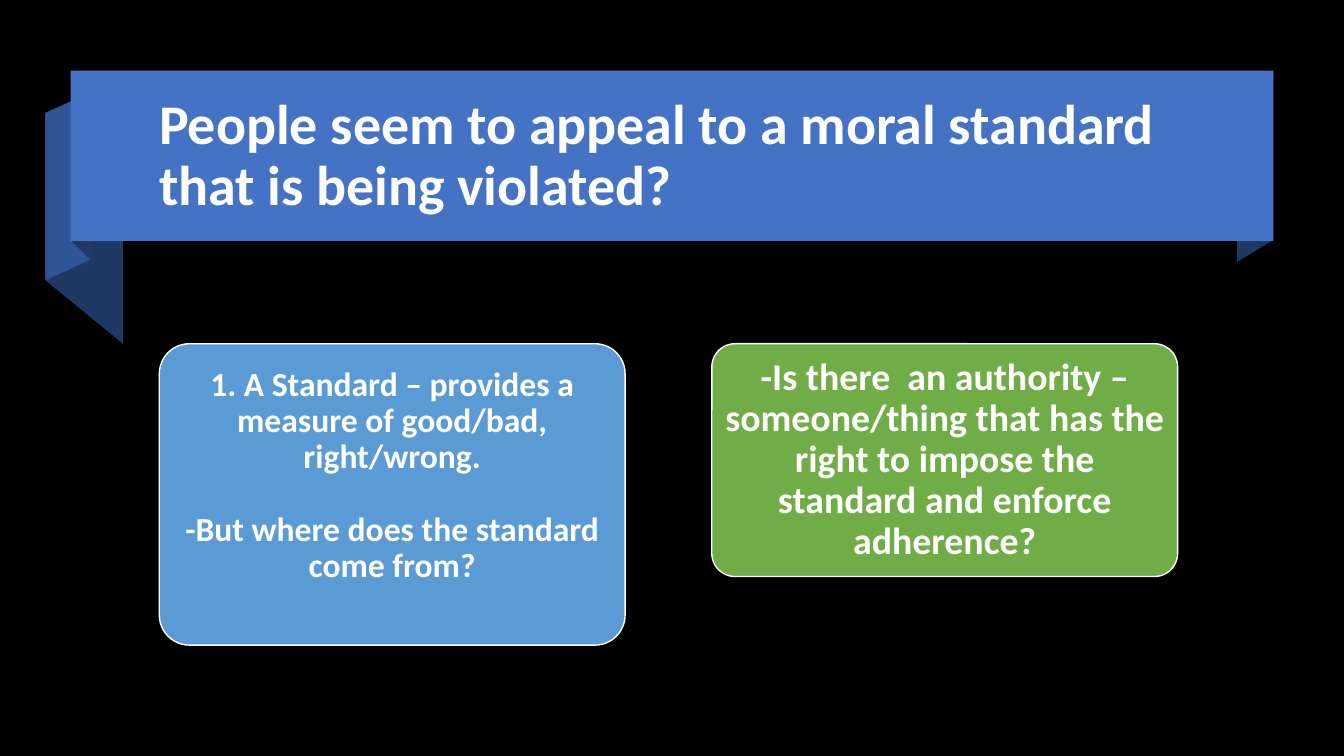
import pptx
import pptx.util
import pptx.dml.color
import pptx.enum.shapes
import pptx.enum.text
from dataclasses import dataclass

Inches = pptx.util.Inches
Pt = pptx.util.Pt
RGB = pptx.dml.color.RGBColor.from_string


@dataclass(frozen=True)
class Theme:
    font: str = "Calibri"
    background: str = "000000"
    text: str = "FFFFFF"
    banner: str = "4472C4"
    fold: str = "2F5597"
    fold_dark: str = "203864"
    standard: str = "5B9BD5"
    authority: str = "70AD47"
    title_size: int = 40
    standard_size: int = 24
    authority_size: int = 27


THEME = Theme()


def add_fold(slide, points, color):
    """Draw one folded face of the ribbon from corner points in inches."""
    corners = [(Inches(x), Inches(y)) for x, y in points]
    outline = slide.shapes.build_freeform(*corners[0], scale=1.0)
    outline.add_line_segments(corners[1:], close=True)
    fold = outline.convert_to_shape()
    fold.shadow.inherit = False
    fold.fill.solid()
    fold.fill.fore_color.rgb = RGB(color)
    fold.line.fill.background()


def add_block(slide, preset, box, color):
    """Draw a filled preset shape without an outline."""
    block = slide.shapes.add_shape(preset, *map(Inches, box))
    block.shadow.inherit = False
    block.fill.solid()
    block.fill.fore_color.rgb = RGB(color)
    block.line.fill.background()
    return block


def write(frame, paragraphs, size, align, gap=0):
    """Fill a text frame with bold paragraphs, separated by gap points."""
    frame.word_wrap = True
    frame.vertical_anchor = pptx.enum.text.MSO_ANCHOR.MIDDLE
    for index, text in enumerate(paragraphs):
        paragraph = frame.add_paragraph() if index else frame.paragraphs[0]
        paragraph.text = text
        paragraph.alignment = align
        paragraph.line_spacing = 0.9
        paragraph.space_before = Pt(gap if index else 0)
        paragraph.font.name = THEME.font
        paragraph.font.size = Pt(size)
        paragraph.font.bold = True
        paragraph.font.color.rgb = RGB(THEME.text)


def add_card(slide, left, height, color, paragraphs, size, gap=0, bottom=0.03):
    """Draw a rounded card with centred text."""
    card = add_block(slide, pptx.enum.shapes.MSO_SHAPE.ROUNDED_RECTANGLE,
                     (left, 3.41, 4.62, height), color)
    card.adjustments[0] = 0.1
    card.line.color.rgb = RGB(THEME.text)
    card.line.width = Pt(1)
    frame = card.text_frame
    frame.margin_left = frame.margin_right = Inches(0.05)
    frame.margin_top = Inches(0.03)
    frame.margin_bottom = Inches(bottom)
    write(frame, paragraphs, size, pptx.enum.text.PP_ALIGN.CENTER, gap)


def add_banner(slide, title):
    """Draw the folded ribbon and its title."""
    add_fold(slide, [(12.63, 2.38), (12.27, 2.6), (12.27, 0.91), (12.63, 0.7)],
             THEME.fold_dark)
    add_fold(slide, [(1.22, 3.41), (0.45, 2.78), (0.45, 1.12), (1.22, 1.75)],
             THEME.fold_dark)
    add_fold(slide, [(0.89, 2.58), (0.45, 2.78), (0.45, 1.12), (0.89, 0.92)],
             THEME.fold)
    add_fold(slide, [(0.89, 2.57), (0.71, 2.39), (0.71, 0.7), (0.89, 0.89)],
             THEME.fold_dark)
    add_block(slide, pptx.enum.shapes.MSO_SHAPE.RECTANGLE,
              (0.7, 0.7, 11.93, 1.69), THEME.banner)
    heading = slide.shapes.add_textbox(
        Inches(1.48), Inches(0.83), Inches(10.94), Inches(1.45))
    write(heading.text_frame, [title], THEME.title_size,
          pptx.enum.text.PP_ALIGN.LEFT)


def main():
    deck = pptx.Presentation()
    deck.slide_width, deck.slide_height = Inches(13.33), Inches(7.5)
    slide = deck.slides.add_slide(deck.slide_layouts[6])
    slide.background.fill.solid()
    slide.background.fill.fore_color.rgb = RGB(THEME.background)

    # Title ribbon
    add_banner(slide, "People seem to appeal to a moral standard "
                      "that is being violated?")

    # Standard card: one line of room below the text
    add_card(slide, 1.58, 2.99, THEME.standard,
             ["1. A Standard – provides a measure of good/bad, right/wrong.",
              "-But where does the standard come from?"],
             THEME.standard_size, gap=26, bottom=0.39)

    # Authority card
    add_card(slide, 7.06, 2.31, THEME.authority,
             ["-Is there  an authority – someone/thing that has the right "
              "to impose the standard and enforce adherence?"],
             THEME.authority_size)

    deck.save("out.pptx")


if __name__ == "__main__":
    main()
